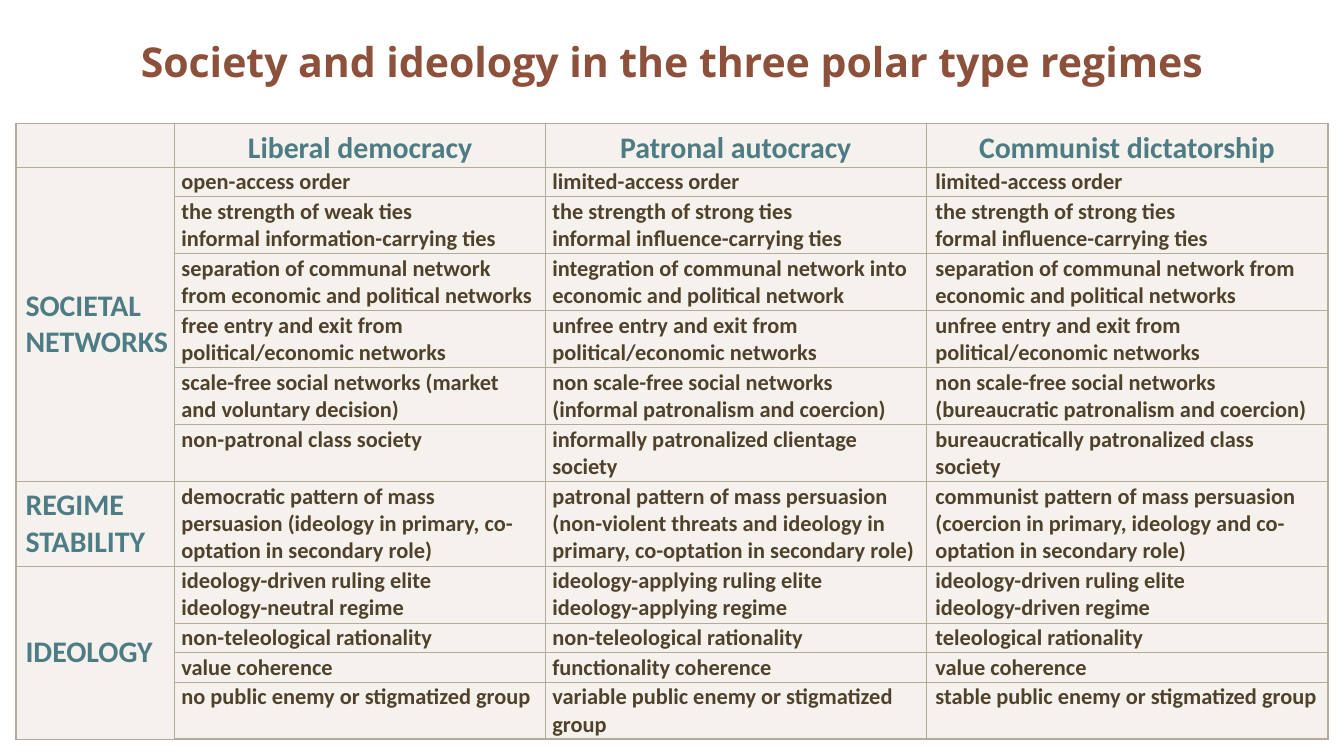
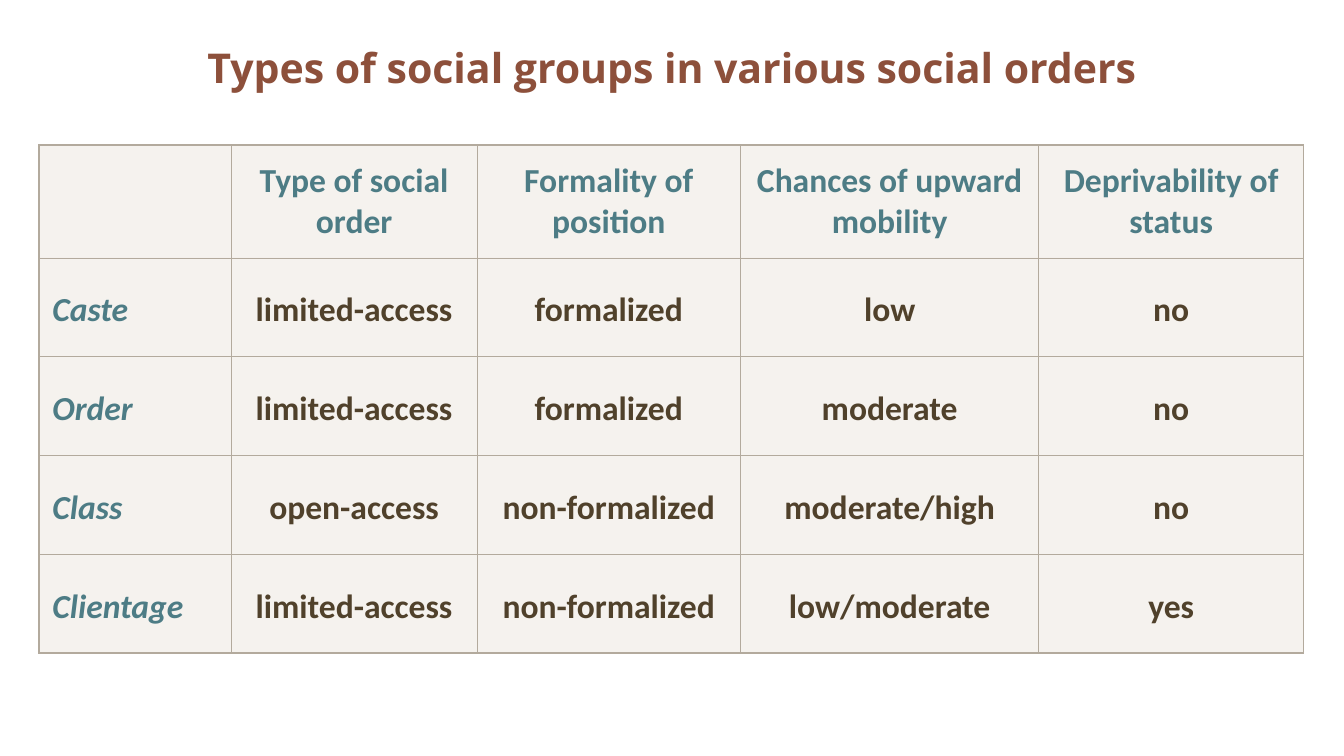
from lxml.etree import SubElement
from pptx import Presentation
from pptx.dml.color import RGBColor
from pptx.enum.text import MSO_ANCHOR, PP_ALIGN
from pptx.oxml import parse_xml
from pptx.oxml.ns import nsdecls, qn
from pptx.util import Inches, Pt

RUST = RGBColor(0x8D, 0x50, 0x3B)
TEAL = RGBColor(0x4D, 0x7C, 0x85)
BROWN = RGBColor(0x50, 0x41, 0x2B)
SAND = RGBColor(0xEF, 0xEA, 0xE4)
EDGE = RGBColor(0xB3, 0xAA, 0x9D)
OPACITY = 60
THIN, THICK = 0.5, 1

REGIMES = ["Liberal democracy", "Patronal autocracy", "Communist dictatorship"]
THEMES = [
    ("SOCIETAL NETWORKS", [
        ["open-access order", "limited-access order", "limited-access order"],
        ["the strength of weak ties\ninformal information-carrying ties",
         "the strength of strong ties\ninformal influence-carrying ties",
         "the strength of strong ties\nformal influence-carrying ties"],
        ["separation of communal network from economic and political networks",
         "integration of communal network into economic and political network",
         "separation of communal network from economic and political networks"],
        ["free entry and exit from political/economic networks",
         "unfree entry and exit from political/economic networks",
         "unfree entry and exit from political/economic networks"],
        ["scale-free social networks (market and voluntary decision)",
         "non scale-free social networks (informal patronalism and coercion)",
         "non scale-free social networks (bureaucratic patronalism and coercion)"],
        ["non-patronal class society",
         "informally patronalized clientage society",
         "bureaucratically patronalized class society"],
    ]),
    ("REGIME STABILITY", [
        ["democratic pattern of mass persuasion (ideology in primary, "
         "co-optation in secondary role)",
         "patronal pattern of mass persuasion (non-violent threats and "
         "ideology in primary, co-optation in secondary role)",
         "communist pattern of mass persuasion (coercion in primary, "
         "ideology and co-optation in secondary role)"],
    ]),
    ("IDEOLOGY", [
        ["ideology-driven ruling elite\nideology-neutral regime",
         "ideology-applying ruling elite\nideology-applying regime",
         "ideology-driven ruling elite\nideology-driven regime"],
        ["non-teleological rationality", "non-teleological rationality",
         "teleological rationality"],
        ["value coherence", "functionality coherence", "value coherence"],
        ["no public enemy or stigmatized group",
         "variable public enemy or stigmatized group",
         "stable public enemy or stigmatized group"],
    ]),
]
GROUPS = [
    ["", "Type of social order", "Formality of position",
     "Chances of upward mobility", "Deprivability of status"],
    ["Caste", "limited-access", "formalized", "low", "no"],
    ["Order", "limited-access", "formalized", "moderate", "no"],
    ["Class", "open-access", "non-formalized", "moderate/high", "no"],
    ["Clientage", "limited-access", "non-formalized", "low/moderate", "yes"],
]


def add_slide(deck, text, spacing=None):
    slide = deck.slides.add_slide(deck.slide_layouts[5])
    title = slide.shapes.title
    title.left, title.top = Inches(0.12), Inches(0)
    title.width, title.height = Inches(9.76), Inches(1)
    frame = title.text_frame
    frame.text = text
    frame.word_wrap = True
    frame.vertical_anchor = MSO_ANCHOR.MIDDLE
    para = frame.paragraphs[0]
    para.alignment = PP_ALIGN.CENTER
    para.line_spacing = spacing
    set_font(para, 22, RUST, "Open Sans")
    return slide


def set_font(para, size, color, name="Calibri", italic=False):
    font = para.font
    font.name, font.size = name, Pt(size)
    font.bold, font.italic = True, italic
    font.color.rgb = color


def style_cell(cell, sides):
    cell.fill.solid()
    cell.fill.fore_color.rgb = SAND
    props = cell._tc.get_or_add_tcPr()
    tint = props.find(qn("a:solidFill"))[0]
    SubElement(tint, qn("a:alpha")).set("val", str(OPACITY * 1000))
    for spot, (side, width) in enumerate(sides.items()):
        props.insert(spot, parse_xml(
            f'<a:ln{side} {nsdecls("a")} w="{Pt(width)}"><a:solidFill>'
            f'<a:srgbClr val="{EDGE}"/></a:solidFill></a:ln{side}>'))


def add_grid(slide, left, top, widths, heights):
    grid = slide.shapes.add_table(
        len(heights), len(widths), Inches(left), Inches(top),
        Inches(sum(widths)), Inches(sum(heights))).table
    grid.first_row = grid.horz_banding = False
    for col, width in zip(grid.columns, widths):
        col.width = Inches(width)
    for row, height in zip(grid.rows, heights):
        row.height = Inches(height)
    for r in range(len(heights)):
        for c in range(len(widths)):
            outer = {"L": c == 0, "R": c == len(widths) - 1,
                     "T": r == 0, "B": r == len(heights) - 1}
            style_cell(grid.cell(r, c), {
                side: THICK if edge else THIN for side, edge in outer.items()})
    return grid


def fill_cell(cell, text, size, color, align=None, spacing=None,
              indent=0, italic=False, middle=True):
    cell.text = text
    if middle:
        cell.vertical_anchor = MSO_ANCHOR.MIDDLE
    for para in cell.text_frame.paragraphs:
        para.alignment = align
        para.line_spacing = spacing
        if indent:
            para._p.get_or_add_pPr().set("marL", str(Inches(indent)))
        set_font(para, size, color, italic=italic)


def set_inset(cell, side, top):
    cell.margin_left = cell.margin_right = Inches(side)
    cell.margin_top, cell.margin_bottom = Inches(top), Inches(0)


def add_regimes(slide, left, top, height):
    head, line, triple = 0.31, 0.22, 0.63
    pair = (height - head - 3 * line - triple) / 7
    heights = [head, line] + [pair] * 5 + [triple, pair, line, line, pair]
    grid = add_grid(slide, left, top, [1.18, 2.76, 2.83, 2.99], heights)
    for c, name in enumerate([""] + REGIMES):
        set_inset(grid.cell(0, c), 0.05, 0.01)
        fill_cell(grid.cell(0, c), name, 16, TEAL, PP_ALIGN.CENTER,
                  1.15 if name else None)
    r = 1
    for label, rows in THEMES:
        side = grid.cell(r, 0)
        if len(rows) > 1:
            side.merge(grid.cell(r + len(rows) - 1, 0))
        set_inset(side, 0, 0)
        fill_cell(side, label, 16, TEAL, indent=0.07)
        for row in rows:
            for c, text in enumerate(row, 1):
                set_inset(grid.cell(r, c), 0.05, 0.01)
                fill_cell(grid.cell(r, c), text, 12, BROWN,
                          indent=0.02 if c == 3 else 0, middle=False)
            r += 1


def add_groups(slide, left, top, height):
    head = 0.84
    grid = add_grid(slide, left, top, [1.43, 1.83, 1.96, 2.22, 1.97],
                    [head] + [(height - head) / 4] * 4)
    for r, row in enumerate(GROUPS):
        for c, text in enumerate(row):
            fill_cell(grid.cell(r, c), text, 18,
                      BROWN if r and c else TEAL,
                      PP_ALIGN.CENTER if c else None,
                      1.15 if r else None, italic=r > 0 and c == 0)


def main():
    deck = Presentation()
    deck.slide_width = Inches(10)
    deck.slide_height = Inches(10 * 9 / 16)
    slide = add_slide(
        deck, "Society and ideology in the three polar type regimes", 0.7)
    add_regimes(slide, 0.12, 0.92, 4.57)
    slide = add_slide(deck, "Types of social groups in various social orders")
    add_groups(slide, 0.29, 1.08, 3.78)
    deck.save("out.pptx")


if __name__ == "__main__":
    main()
